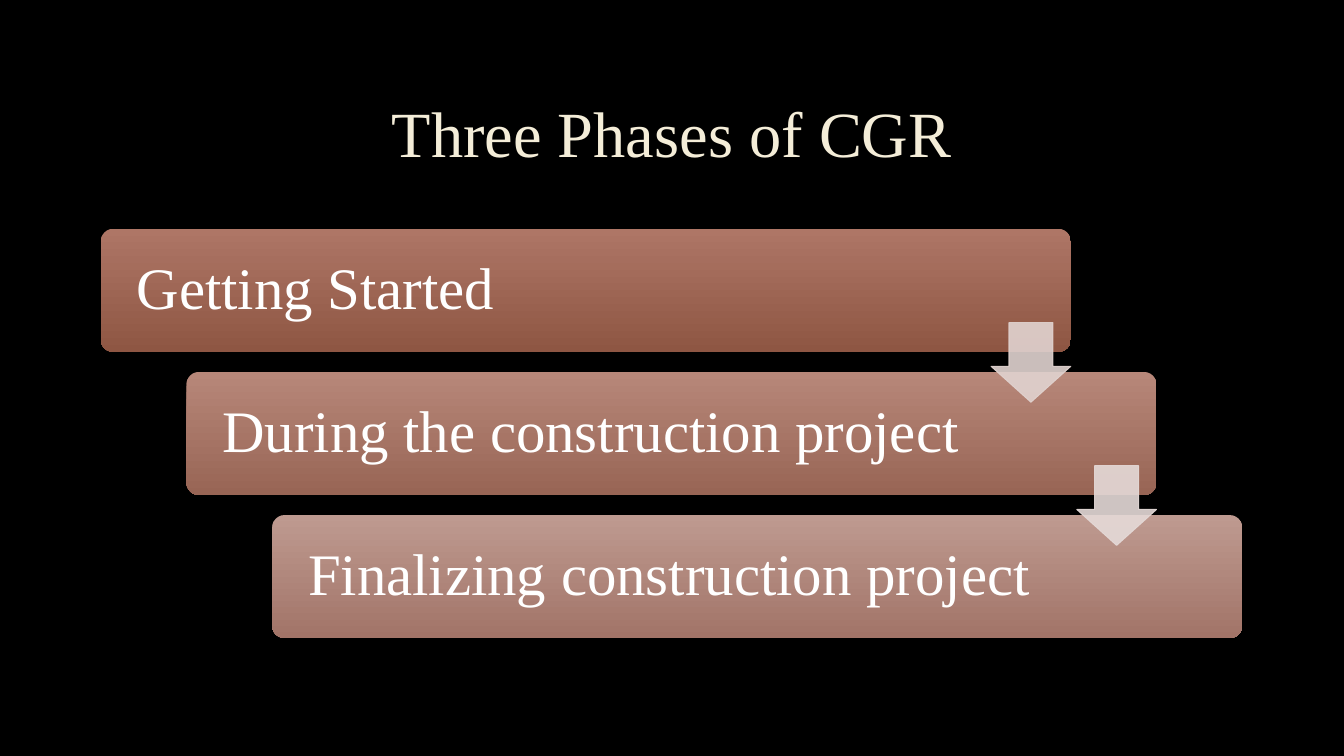
import pptx
import pptx.util
import pptx.dml.color
import pptx.enum.dml
import pptx.enum.shapes
import pptx.enum.text
import pptx.oxml.ns
import lxml.etree

RGB = pptx.dml.color.RGBColor
SHAPE = pptx.enum.shapes.MSO_SHAPE
ALIGN = pptx.enum.text.PP_ALIGN
Inches = pptx.util.Inches

BLACK = RGB(0x00, 0x00, 0x00)
WHITE = RGB(0xFF, 0xFF, 0xFF)
CREAM = RGB(0xF4, 0xED, 0xD8)

TITLE = "Three Phases of CGR"
PHASES = [
    ("Getting Started", RGB(0xAE, 0x76, 0x66), RGB(0x8E, 0x56, 0x43)),
    ("During the construction project", RGB(0xB7, 0x87, 0x79), RGB(0x98, 0x65, 0x55)),
    ("Finalizing construction project", RGB(0xBE, 0x9A, 0x90), RGB(0xA2, 0x74, 0x68)),
]
ARROWS = [RGB(0xE1, 0xD3, 0xD0), RGB(0xE5, 0xDA, 0xD8)]

FONT = "Times New Roman"
LEFT, TOP = 1, 2.27
STEP_X, STEP_Y = 0.85, 1.42
BAR_W, BAR_H = 9.62, 1.22
ARROW = 0.79
ARROW_DROP = 0.93
OPACITY = 90


def write(sp, text, size=42, color=WHITE, align=ALIGN.LEFT, inset=0.1):
    tf = sp.text_frame
    tf.word_wrap = True
    tf.vertical_anchor = pptx.enum.text.MSO_ANCHOR.MIDDLE
    tf.margin_left = Inches(inset)
    p = tf.paragraphs[0]
    p.alignment = align
    p.line_spacing = 0.9
    r = p.add_run()
    r.text = text
    r.font.name = FONT
    r.font.size = pptx.util.Pt(size)
    r.font.color.rgb = color


def add_bar(s, x, y, text, top_color, bottom_color):
    sp = s.shapes.add_shape(SHAPE.ROUNDED_RECTANGLE, Inches(x), Inches(y), Inches(BAR_W), Inches(BAR_H))
    sp.adjustments[0] = 0.1
    sp.shadow.inherit = False
    sp.line.fill.background()
    sp.fill.gradient()
    sp.fill.gradient_angle = 270
    for stop, color, position in zip(sp.fill.gradient_stops, (top_color, bottom_color), (0, 1)):
        stop.color.rgb = color
        stop.position = position
    write(sp, text, inset=0.32)


def add_arrow(s, x, y, color):
    sp = s.shapes.add_shape(SHAPE.DOWN_ARROW, Inches(x), Inches(y), Inches(ARROW), Inches(ARROW))
    sp.adjustments[0] = 0.55
    sp.adjustments[1] = 0.45
    sp.shadow.inherit = False
    sp.fill.solid()
    sp.fill.fore_color.rgb = color
    sp.line.color.rgb = color
    sp.line.width = pptx.util.Pt(0.75)
    qn = pptx.oxml.ns.qn
    for clr in sp.element.spPr.iter(qn("a:srgbClr")):
        lxml.etree.SubElement(clr, qn("a:alpha")).set("val", str(OPACITY * 1000))


def main():
    prs = pptx.Presentation()
    prs.slide_width, prs.slide_height = Inches(13.33), Inches(7.5)
    s = prs.slides.add_slide(prs.slide_layouts[6])
    s.background.fill.solid()
    s.background.fill.fore_color.rgb = BLACK

    title = s.shapes.add_textbox(Inches(LEFT), Inches(0.67), Inches(11.32), Inches(1.38))
    write(title, TITLE, size=46, color=CREAM, align=ALIGN.CENTER)

    for i, phase in enumerate(PHASES):
        add_bar(s, LEFT + i * STEP_X, TOP + i * STEP_Y, *phase)
    for i, color in enumerate(ARROWS):
        add_arrow(s, LEFT + BAR_W - ARROW + i * STEP_X, TOP + ARROW_DROP + i * STEP_Y, color)

    prs.save("out.pptx")


if __name__ == "__main__":
    main()
